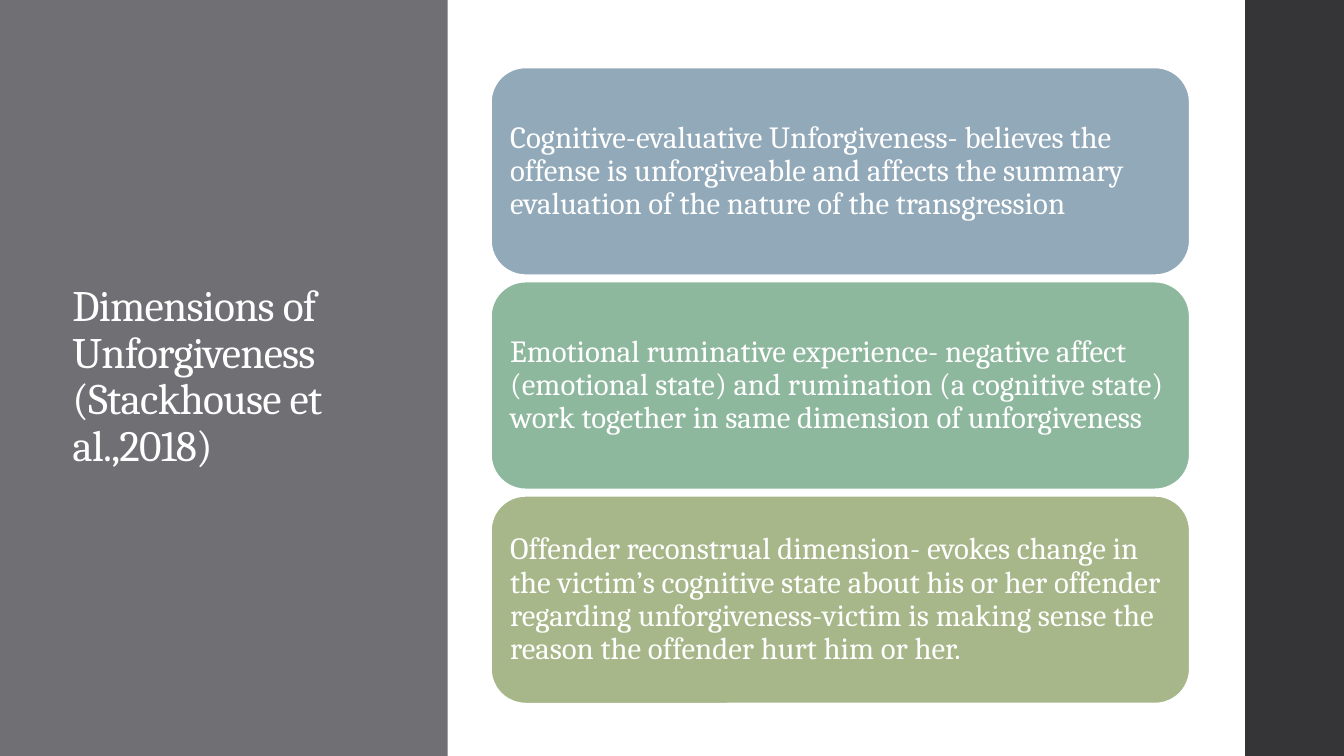
from pptx import Presentation
from pptx.dml.color import RGBColor
from pptx.enum.shapes import MSO_SHAPE
from pptx.enum.text import MSO_ANCHOR, PP_ALIGN
from pptx.util import Inches, Pt

RECT = MSO_SHAPE.RECTANGLE
ROUNDED = MSO_SHAPE.ROUNDED_RECTANGLE
MIDDLE = MSO_ANCHOR.MIDDLE
LEFT = PP_ALIGN.LEFT

COLORS = {
    "white": "FFFFFF",
    "title_panel": "6F6F74",
    "side_strip": "353537",
    "cognitive": "92A9B9",
    "emotional": "8EB89E",
    "offender": "A7B789",
}

DIMENSIONS = [
    ("cognitive", "Cognitive-evaluative Unforgiveness- believes the offense is "
     "unforgiveable and affects the summary evaluation of the nature of the "
     "transgression"),
    ("emotional", "Emotional ruminative experience- negative affect (emotional "
     "state) and rumination (a cognitive state) work together in same dimension "
     "of unforgiveness"),
    ("offender", "Offender reconstrual dimension- evokes change in the victim’s "
     "cognitive state about his or her offender regarding unforgiveness-victim "
     "is making sense the reason the offender hurt him or her."),
]

CARD_TOP, CARD_HEIGHT, CARD_PITCH = 0.67, 2.06, 2.125


def rgb(name):
    return RGBColor.from_string(COLORS[name])


def write_text(frame, text, *, size, font, color="white", inset=0.1,
               tracking=None):
    frame.word_wrap = True
    frame.vertical_anchor = MIDDLE
    frame.margin_left = frame.margin_right = Inches(inset)
    frame.margin_top = frame.margin_bottom = Inches(inset)
    paragraph = frame.paragraphs[0]
    paragraph.alignment = LEFT
    paragraph.line_spacing = 0.9
    run = paragraph.add_run()
    run.text = text
    run.font.size = Pt(size)
    run.font.name = font
    run.font.color.rgb = rgb(color)
    if tracking is not None:
        run.font._element.set("spc", str(round(tracking * 100)))


class SlideBuilder:
    font = "Cambria"
    title_size = 31
    card_size = 22

    def __init__(self, slide):
        self.slide = slide

    def block(self, kind, left, top, width, height, fill):
        block = self.slide.shapes.add_shape(
            kind, Inches(left), Inches(top), Inches(width), Inches(height))
        block.shadow.inherit = False
        block.fill.solid()
        block.fill.fore_color.rgb = rgb(fill)
        block.line.fill.background()
        return block

    def title(self, text, left, top, width, height):
        title = self.slide.shapes.add_textbox(
            Inches(left), Inches(top), Inches(width), Inches(height))
        write_text(title.text_frame, text, size=self.title_size,
                   font=self.font, tracking=-0.5)

    def card(self, text, left, top, width, height, fill):
        card = self.block(ROUNDED, left, top, width, height, fill)
        card.line.color.rgb = rgb("white")
        card.line.width = Pt(1.1)
        write_text(card.text_frame, text, size=self.card_size,
                   font=self.font, inset=0.09)


def main():
    deck = Presentation()
    deck.slide_width, deck.slide_height = Inches(13.33), Inches(7.5)
    builder = SlideBuilder(deck.slides.add_slide(deck.slide_layouts[6]))

    # Title panel and side strip
    builder.block(RECT, 0, 0, 4.44, 7.5, "title_panel")
    builder.title("Dimensions of Unforgiveness (Stackhouse et al.,2018)",
                  0.62, 0.91, 2.97, 5.67)
    builder.block(RECT, 12.35, 0, 0.98, 7.5, "side_strip")

    # One card per dimension
    for index, (fill, description) in enumerate(DIMENSIONS):
        builder.card(description, 4.87, CARD_TOP + index * CARD_PITCH,
                     6.93, CARD_HEIGHT, fill)

    deck.save("out.pptx")


if __name__ == "__main__":
    main()
